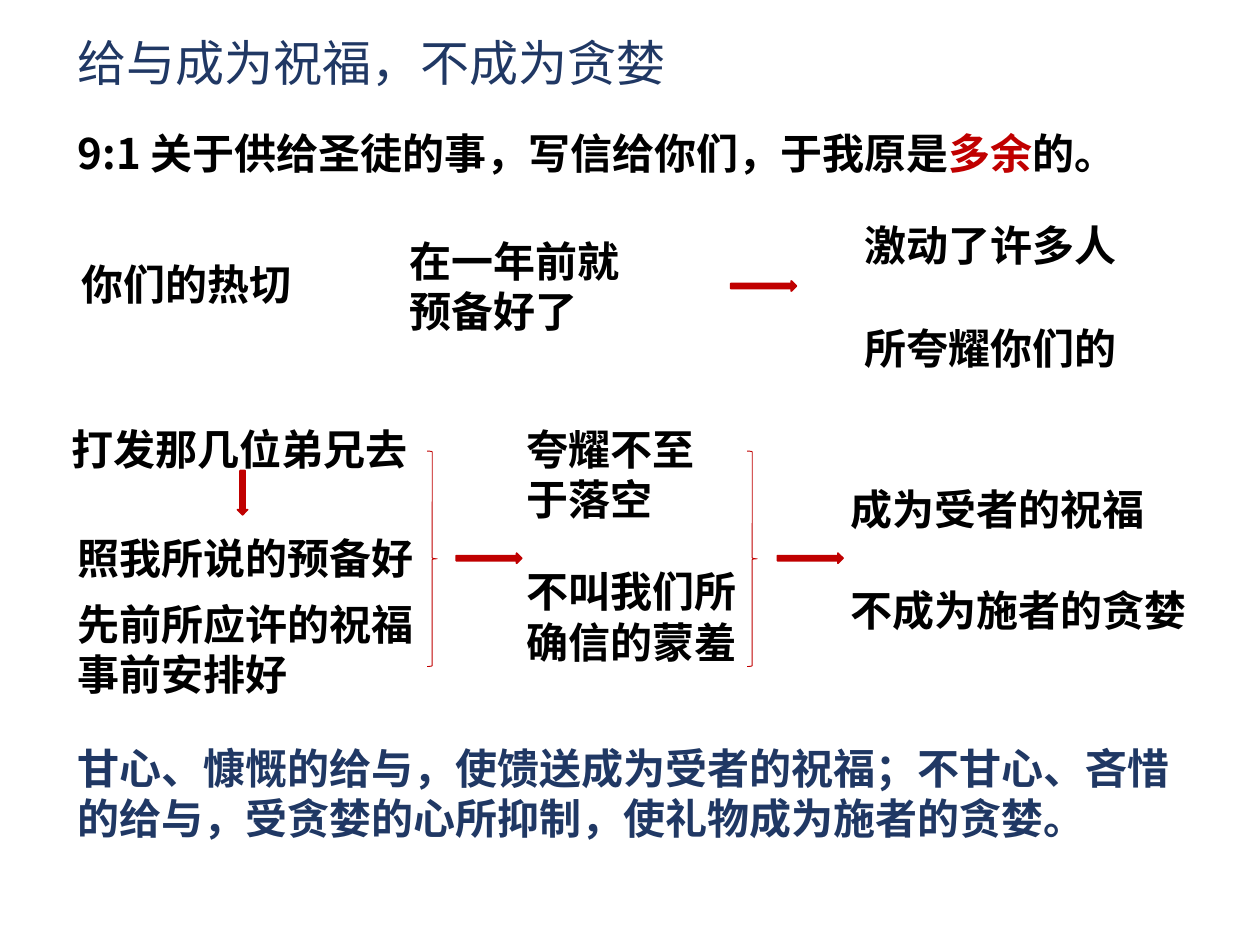
from lxml import etree
from pptx import Presentation
from pptx.dml.color import RGBColor
from pptx.enum.shapes import MSO_SHAPE
from pptx.oxml.ns import qn
from pptx.util import Inches, Pt

ARROW = MSO_SHAPE.RIGHT_ARROW
BRACE = MSO_SHAPE.RIGHT_BRACE
BLACK = RGBColor(0x00, 0x00, 0x00)
RED = RGBColor(0xC0, 0x00, 0x00)
NAVY = RGBColor(0x20, 0x38, 0x64)
LATIN = "Calibri"
NOTO = "Noto Sans CJK SC"
COLS, ROWS = 100, 75


class Page:
    """Places elements on a grid of COLS by ROWS cells."""

    def __init__(self, deck):
        self.slide = deck.slides.add_slide(deck.slide_layouts[6])
        self.col = deck.slide_width / COLS
        self.row = deck.slide_height / ROWS

    def box(self, x, y, w, h):
        return (round(x * self.col), round(y * self.row),
                round(w * self.col), round(h * self.row))

    def text(self, x, y, w, *paras, lines=1, size=24, bold=True,
             color=BLACK, font=LATIN):
        """Each paragraph is a string or a list of (words, colour) runs."""
        high = 1 + lines * size * 0.169
        frame = self.slide.shapes.add_textbox(*self.box(x, y, w, high)).text_frame
        frame.word_wrap = True
        for i, runs in enumerate(paras):
            para = frame.add_paragraph() if i else frame.paragraphs[0]
            if i:
                para.space_before = Pt(29)
            if isinstance(runs, str):
                runs = [(runs, color)]
            for words, tint in runs:
                run = para.add_run()
                run.text = words
                run.font.size = Pt(size)
                run.font.bold = bold
                run.font.color.rgb = tint
                run.font.name = font
                east = etree.SubElement(run.font._element, qn("a:ea"))
                east.set("typeface", LATIN)

    def shape(self, kind, x, y, w, h, line):
        item = self.slide.shapes.add_shape(kind, *self.box(x, y, w, h))
        item.shadow.inherit = False
        item.line.color.rgb = RED
        item.line.width = Pt(line)
        return item

    def arrow(self, x, y, w=5.2, turn=0):
        item = self.shape(ARROW, x, y, w, 0.8, 1)
        item.fill.solid()
        item.fill.fore_color.rgb = RED
        item.rotation = turn

    def brace(self, x, y, h):
        self.shape(BRACE, x, y, 0.8, h, 0.5).fill.background()


def main():
    deck = Presentation()
    deck.slide_width, deck.slide_height = Inches(10), Inches(7.5)
    page = Page(deck)

    page.text(5.2, 2.1, 73.8, "给与成为祝福，不成为贪婪",
              size=28, bold=False, color=NAVY, font=NOTO)
    page.text(5.2, 9.6, 88.6, [("9:1 关于供给圣徒的事，写信给你们，于我原是", BLACK),
                               ("多余", RED), ("的。", BLACK)], font=NOTO)

    page.text(5.5, 20, 28.8, "你们的热切")
    page.text(31.5, 18.2, 20.2, "在一年前就预备好了", lines=2)
    page.text(67.6, 16.9, 23, "激动了许多人")
    page.text(67.6, 25.1, 23, "所夸耀你们的")

    page.text(4.7, 33.1, 31, "打发那几位弟兄去")
    page.text(5.2, 41.8, 31, "照我所说的预备好")
    page.text(5.2, 47, 29.4, "先前所应许的祝福事前安排好", lines=2)
    page.text(40.8, 33.1, 18.5, "夸耀不至于落空", lines=2)
    page.text(40.8, 44.4, 19.8, "不叫我们所确信的蒙羞", lines=2)
    page.text(66.5, 37.9, 30.1, "成为受者的祝福", "不成为施者的贪婪", lines=3)

    page.text(5.2, 58.4, 91,
              "甘心、慷慨的给与，使馈送成为受者的祝福；不甘心、吝惜的给与，"
              "受贪婪的心所抑制，使礼物成为施者的贪婪。",
              lines=2, color=NAVY, font=NOTO)

    page.arrow(58, 22.3)
    page.arrow(17.5, 38.7, w=3.5, turn=90)
    for x in (36.2, 61.7):
        page.arrow(x, 43.9)
    for x in (33.9, 59.3):
        page.brace(x, 35.8, 17.1)

    deck.save("out.pptx")


if __name__ == "__main__":
    main()
